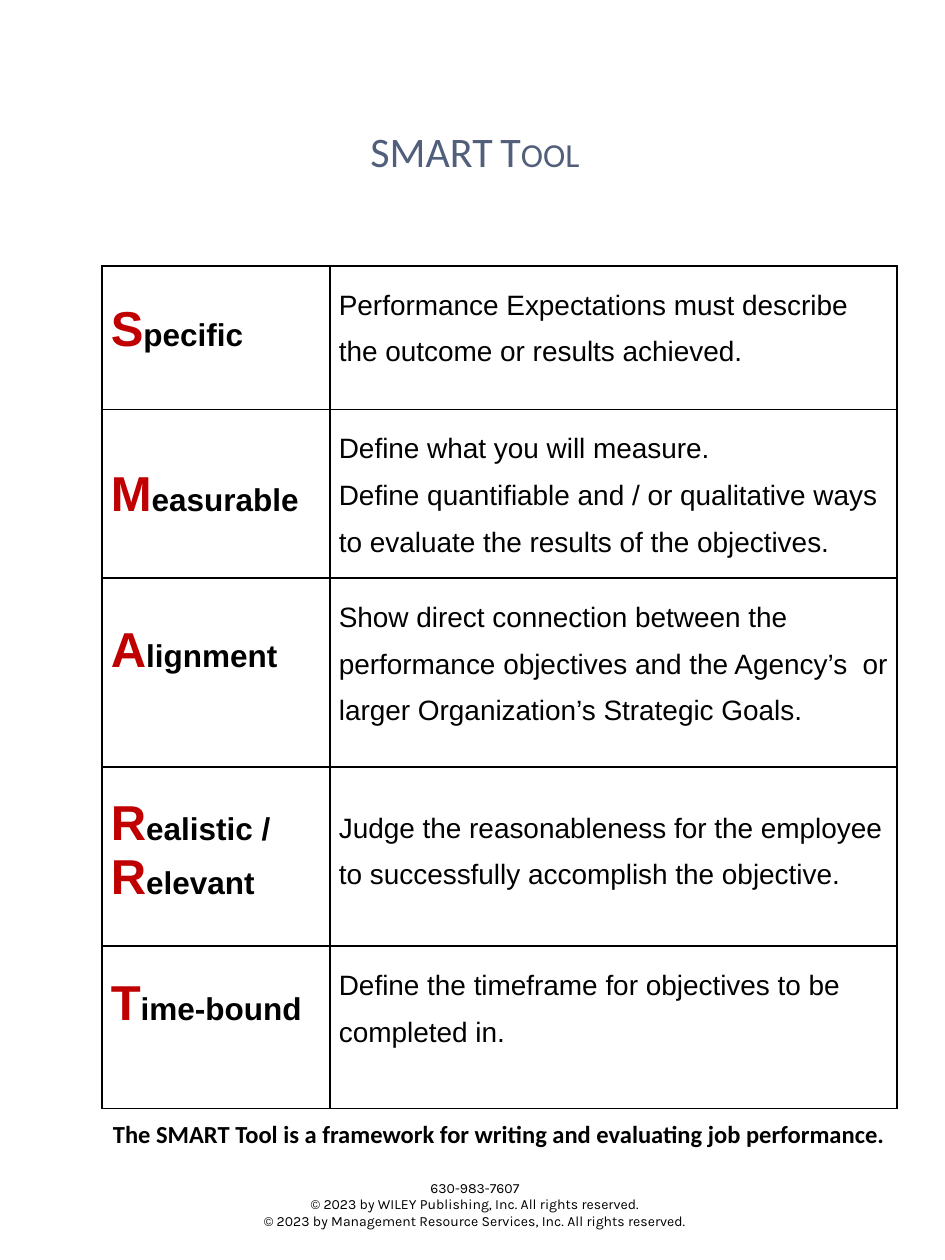
from lxml.etree import SubElement
from pptx import Presentation
from pptx.dml.color import RGBColor
from pptx.enum.text import MSO_AUTO_SIZE as AutoSize, PP_ALIGN as Align
from pptx.oxml.ns import qn
from pptx.util import Inches, Pt

BLACK, RED, SLATE, WHITE = "000000", "C00000", "515F7B", "FFFFFF"
WIDTH, HEIGHT = 7.5, 10
MARGIN = 0.07
COLUMNS = (1.81, 4.5)

TITLE = "SMART Tool"
SUMMARY = "The SMART Tool is a framework for writing and evaluating job performance."
FOOTER = [
    "630-983-7607",
    "© 2023 by WILEY Publishing, Inc. All rights reserved.",
    "© 2023 by Management Resource Services, Inc. All rights reserved.",
]
# Row height, then for each cell: lines, top margin, line spacing
ROWS = [
    (1.14, (["Specific"], MARGIN, 1.5),
     (["Performance Expectations must describe the outcome or results achieved."], MARGIN, 1.5)),
    (1.33, (["Measurable"], 0.24, 1.5),
     (["Define what you will measure.",
       "Define quantifiable and / or qualitative ways to evaluate the results of the objectives."],
      MARGIN, 1.5)),
    (1.5, (["Alignment"], 0.36, 1.0),
     (["Show direct connection between the performance objectives and the Agency’s  "
       "or larger Organization’s Strategic Goals."], MARGIN, 1.5)),
    (1.42, (["Realistic / ", "Relevant"], 0.23, 1.0),
     (["Judge the reasonableness for the employee to successfully accomplish the objective."],
      0.24, 1.5)),
    (1.29, (["Time-bound"], 0.24, 1.0),
     (["Define the timeframe for objectives to be completed in."], MARGIN, 1.5)),
]


def color(value):
    return RGBColor.from_string(value)


def add_run(paragraph, text, size, font, ink=BLACK, bold=False):
    run = paragraph.add_run()
    run.text = text
    run.font.size, run.font.name, run.font.bold = Pt(size), font, bold
    run.font.color.rgb = color(ink)
    return run


def paragraphs(frame, lines):
    for index, line in enumerate(lines):
        yield (frame.add_paragraph() if index else frame.paragraphs[0]), line


def add_text(slide, box, lines, size, font, ink=BLACK, bold=False, wrap=False):
    frame = slide.shapes.add_textbox(*map(Inches, box)).text_frame
    frame.word_wrap, frame.auto_size = wrap, AutoSize.SHAPE_TO_FIT_TEXT
    for paragraph, line in paragraphs(frame, lines):
        paragraph.alignment = Align.CENTER
        run = add_run(paragraph, line, size, font, ink, bold)
    return run


def add_borders(cell):
    properties = cell._tc.get_or_add_tcPr()
    for side in ("a:lnL", "a:lnR", "a:lnT", "a:lnB"):
        line = SubElement(properties, qn(side), w=str(Pt(1)))
        SubElement(SubElement(line, qn("a:solidFill")), qn("a:srgbClr"), val=BLACK)


def fill_cell(cell, lines, top, spacing, is_label):
    add_borders(cell)
    cell.margin_left = cell.margin_right = cell.margin_bottom = Inches(MARGIN)
    cell.margin_top = Inches(top)
    if is_label:
        cell.fill.background()
    else:
        cell.fill.solid()
        cell.fill.fore_color.rgb = color(WHITE)
    for paragraph, line in paragraphs(cell.text_frame, lines):
        paragraph.line_spacing = spacing
        if is_label:
            add_run(paragraph, line[0], 28, "Arial", RED, True)
            add_run(paragraph, line[1:], 18, "Arial", BLACK, True)
        else:
            add_run(paragraph, line, 16, "Arial")


def add_smart_table(slide):
    heights = [row[0] for row in ROWS]
    box = (0.81, 2.11, sum(COLUMNS), sum(heights))
    table = slide.shapes.add_table(len(ROWS), len(COLUMNS), *map(Inches, box)).table
    table.first_row = table.horz_banding = False
    for column, width in zip(table.columns, COLUMNS):
        column.width = Inches(width)
    for row, (height, *cells) in zip(table.rows, ROWS):
        row.height = Inches(height)
        for index, (cell, content) in enumerate(zip(row.cells, cells)):
            fill_cell(cell, *content, is_label=index == 0)


def main():
    presentation = Presentation()
    presentation.slide_width, presentation.slide_height = Inches(WIDTH), Inches(HEIGHT)
    slide = presentation.slides.add_slide(presentation.slide_layouts[6])

    # Footer, table, title in small capitals, summary line
    add_text(slide, (1.98, 9.31, 3.58, 0.64), FOOTER, 8, "Karla")
    add_smart_table(slide)
    title = add_text(slide, (2.83, 0.95, 1.88, 0.5), [TITLE], 24, "Calibri", SLATE)
    title.font._element.set("cap", "small")
    add_text(slide, (0.75, 8.83, 6.42, 0.34), [SUMMARY], 14, "Calibri", bold=True, wrap=True)

    presentation.save("out.pptx")


if __name__ == "__main__":
    main()
